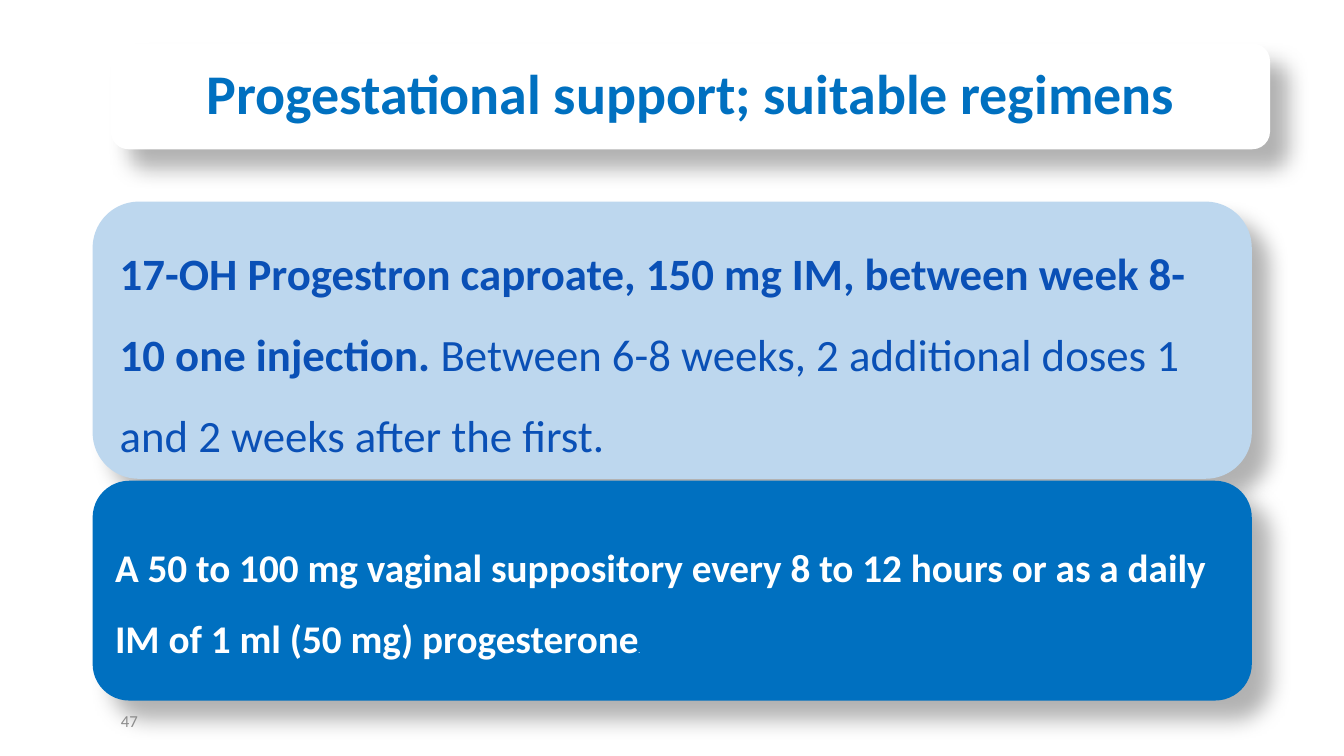
from lxml import etree
from pptx import Presentation
from pptx.dml.color import RGBColor
from pptx.enum import shapes, text
from pptx.oxml import ns
from pptx.util import Pt

CARD_WIDTH = 828
SHADOW = (
    f'<a:effectLst {ns.nsdecls("a")}>'
    '<a:outerShdw blurRad="190500" dist="228600" dir="2700000" algn="tl" rotWithShape="0">'
    '<a:srgbClr val="000000"><a:alpha val="30000"/></a:srgbClr>'
    '</a:outerShdw></a:effectLst>'
)


def color(value):
    return RGBColor.from_string(value)


def add_text(slide, box, runs, *, ink, inset=(7.2, 3.6), spacing=1.0,
             align=text.PP_ALIGN.LEFT):
    frame = slide.shapes.add_textbox(*map(Pt, box)).text_frame
    frame.word_wrap = True
    frame.vertical_anchor = text.MSO_ANCHOR.MIDDLE
    frame.margin_left = frame.margin_right = Pt(inset[0])
    frame.margin_top = frame.margin_bottom = Pt(inset[1])
    paragraph = frame.paragraphs[0]
    paragraph.alignment = align
    paragraph.line_spacing = spacing
    for words, size, bold in runs:
        run = paragraph.add_run()
        run.text = words
        run.font.name = "Calibri"
        run.font.size = Pt(size)
        run.font.bold = bold
        run.font.color.rgb = color(ink)


def add_card(slide, left, top, height, fill, pad, inset, runs, **style):
    card = slide.shapes.add_shape(
        shapes.MSO_SHAPE.ROUNDED_RECTANGLE,
        Pt(left), Pt(top), Pt(CARD_WIDTH), Pt(height))
    card.fill.solid()
    card.fill.fore_color.rgb = color(fill)
    card.line.fill.background()
    card._element.spPr.append(etree.fromstring(SHADOW))
    box = (left + pad, top + pad, CARD_WIDTH - 2 * pad, height - 2 * pad)
    add_text(slide, box, runs, inset=(inset, inset), **style)


def main():
    deck = Presentation()
    deck.slide_width, deck.slide_height = Pt(960), Pt(540)
    slide = deck.slides.add_slide(deck.slide_layouts[6])

    add_card(slide, 79.2, 31, 75.6, "FFFFFF", 3.7, 12,
             [("Progestational support; suitable regimens", 40, True)],
             ink="0070C0", spacing=0.9, align=text.PP_ALIGN.CENTER)
    add_card(slide, 66.2, 144, 198, "BDD7EE", 9.7, 9.6,
             [("17-OH Progestron caproate, 150 mg IM, between week 8-10 one injection. ", 32, True),
              ("Between 6-8 weeks, 2 additional doses 1 and 2 weeks after the first.", 32, False)],
             ink="0A50B6", spacing=1.5)
    add_card(slide, 66.2, 343.4, 157, "0070C0", 7.6, 8.4,
             [("A 50 to 100 mg vaginal suppository every 8 to 12 hours or as a daily "
               "IM of 1 ml (50 mg) progesterone", 28, True),
              (".", 5, True)],
             ink="FFFFFF", spacing=1.5)
    add_text(slide, (79.2, 500.4, 216, 28.8), [("47", 12, False)], ink="8C8C8C")

    deck.save("out.pptx")


if __name__ == "__main__":
    main()
